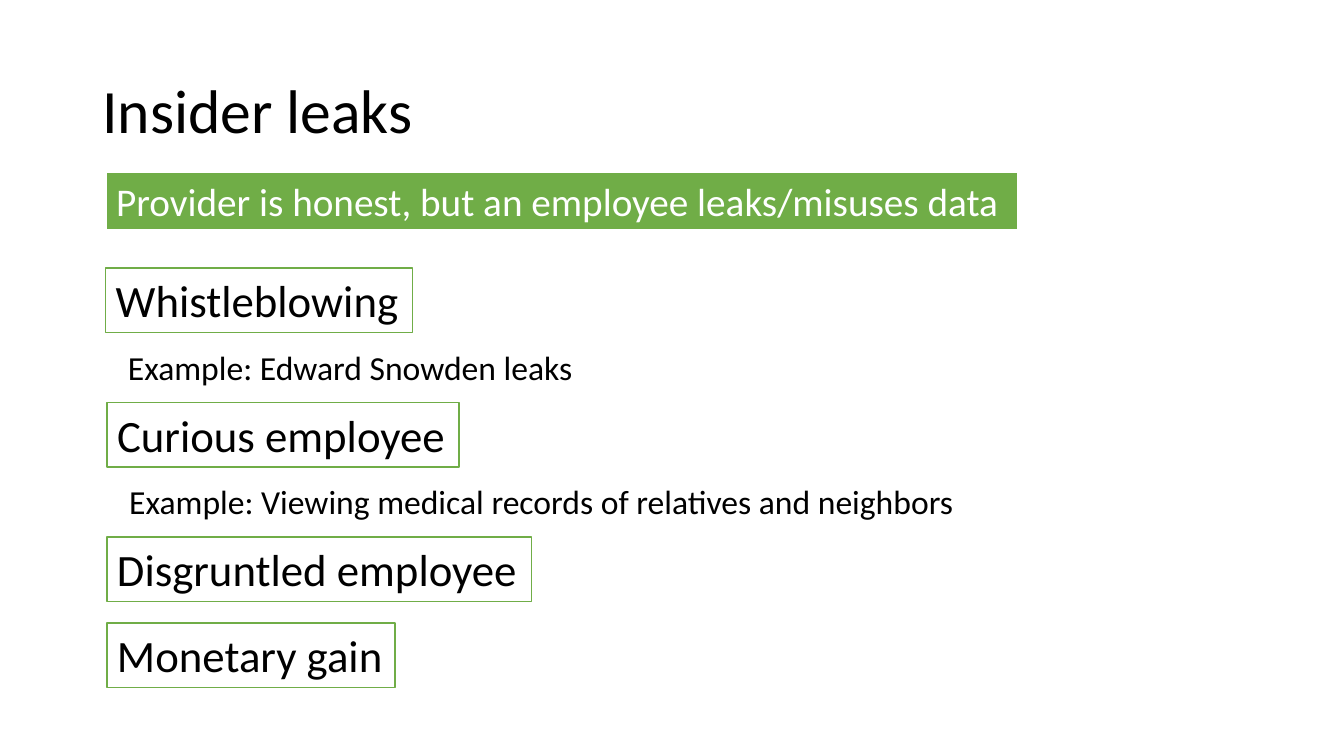
from dataclasses import dataclass

from pptx import Presentation
from pptx.dml.color import RGBColor
from pptx.enum.shapes import MSO_SHAPE
from pptx.enum.text import MSO_ANCHOR, MSO_AUTO_SIZE, PP_ALIGN
from pptx.util import Inches, Pt

COLUMNS, ROWS = 32, 18


@dataclass(frozen=True)
class Theme:
    font: str = "Calibri"
    ink: RGBColor = RGBColor(0x00, 0x00, 0x00)
    paper: RGBColor = RGBColor(0xFF, 0xFF, 0xFF)
    accent: RGBColor = RGBColor(0x70, 0xAD, 0x47)
    title_size: int = 44
    cause_size: int = 32
    banner_size: int = 28
    example_size: int = 24


class SlideBuilder:
    """Places elements on a grid of 32 columns by 18 rows."""

    def __init__(self, deck, theme):
        self.theme = theme
        self.slide = deck.slides.add_slide(deck.slide_layouts[6])
        self.column = deck.slide_width / COLUMNS
        self.row = deck.slide_height / ROWS

    def place(self, left, top, width, height):
        return (round(left * self.column), round(top * self.row),
                round(width * self.column), round(height * self.row))

    def fill_text(self, shape, wording, size, color):
        frame = shape.text_frame
        frame.word_wrap = False
        frame.auto_size = MSO_AUTO_SIZE.SHAPE_TO_FIT_TEXT
        frame.vertical_anchor = MSO_ANCHOR.TOP
        paragraph = frame.paragraphs[0]
        paragraph.alignment = PP_ALIGN.LEFT
        run = paragraph.add_run()
        run.text = wording
        run.font.name = self.theme.font
        run.font.size = Pt(size)
        run.font.color.rgb = color
        return frame

    def text(self, wording, grid_box, size):
        label = self.slide.shapes.add_textbox(*self.place(*grid_box))
        return self.fill_text(label, wording, size, self.theme.ink)

    def title(self, wording, grid_box):
        frame = self.text(wording, grid_box, self.theme.title_size)
        frame.auto_size = MSO_AUTO_SIZE.NONE
        frame.word_wrap = True
        frame.vertical_anchor = MSO_ANCHOR.MIDDLE
        frame.paragraphs[0].line_spacing = 0.9

    def box(self, wording, grid_box, size, color, fill, line, line_width):
        panel = self.slide.shapes.add_shape(
            MSO_SHAPE.RECTANGLE, *self.place(*grid_box))
        panel.shadow.inherit = False
        panel.fill.solid()
        panel.fill.fore_color.rgb = fill
        panel.line.color.rgb = line
        panel.line.width = Pt(line_width)
        self.fill_text(panel, wording, size, color)

    def banner(self, wording, grid_box):
        theme = self.theme
        self.box(wording, grid_box, theme.banner_size, theme.paper,
                 theme.accent, theme.paper, 1.5)

    def cause(self, wording, grid_box):
        theme = self.theme
        self.box(wording, grid_box, theme.cause_size, theme.ink,
                 theme.paper, theme.accent, 1)

    def example(self, wording, grid_box):
        self.text(wording, grid_box, self.theme.example_size)


def main():
    deck = Presentation()
    deck.slide_width, deck.slide_height = Inches(13.33), Inches(7.5)
    leaks = SlideBuilder(deck, Theme())

    # Heading and definition
    leaks.title("Insider leaks", (2.2, 0.96, 27.6, 3.48))
    leaks.banner("Provider is honest, but an employee leaks/misuses data",
                 (2.53, 4.1, 21.72, 1.37))

    # Causes: wording, left, top, width
    causes = [
        ("Whistleblowing", 2.52, 6.38, 7.3),
        ("Curious employee", 2.55, 9.58, 8.38),
        ("Disgruntled employee", 2.55, 12.79, 10.1),
        ("Monetary gain", 2.55, 14.83, 6.86),
    ]
    # Examples by cause: wording, width
    examples = {
        "Whistleblowing": ("Example: Edward Snowden leaks", 11.16),
        "Curious employee": (
            "Example: Viewing medical records of relatives and neighbors",
            20.71),
    }
    example_indent, example_drop = 0.29, 1.76
    for cause, left, top, width in causes:
        leaks.cause(cause, (left, top, width, 1.54))
        if cause in examples:
            example, example_width = examples[cause]
            leaks.example(example, (left + example_indent, top + example_drop,
                                    example_width, 1.2))

    deck.save("out.pptx")


if __name__ == "__main__":
    main()
